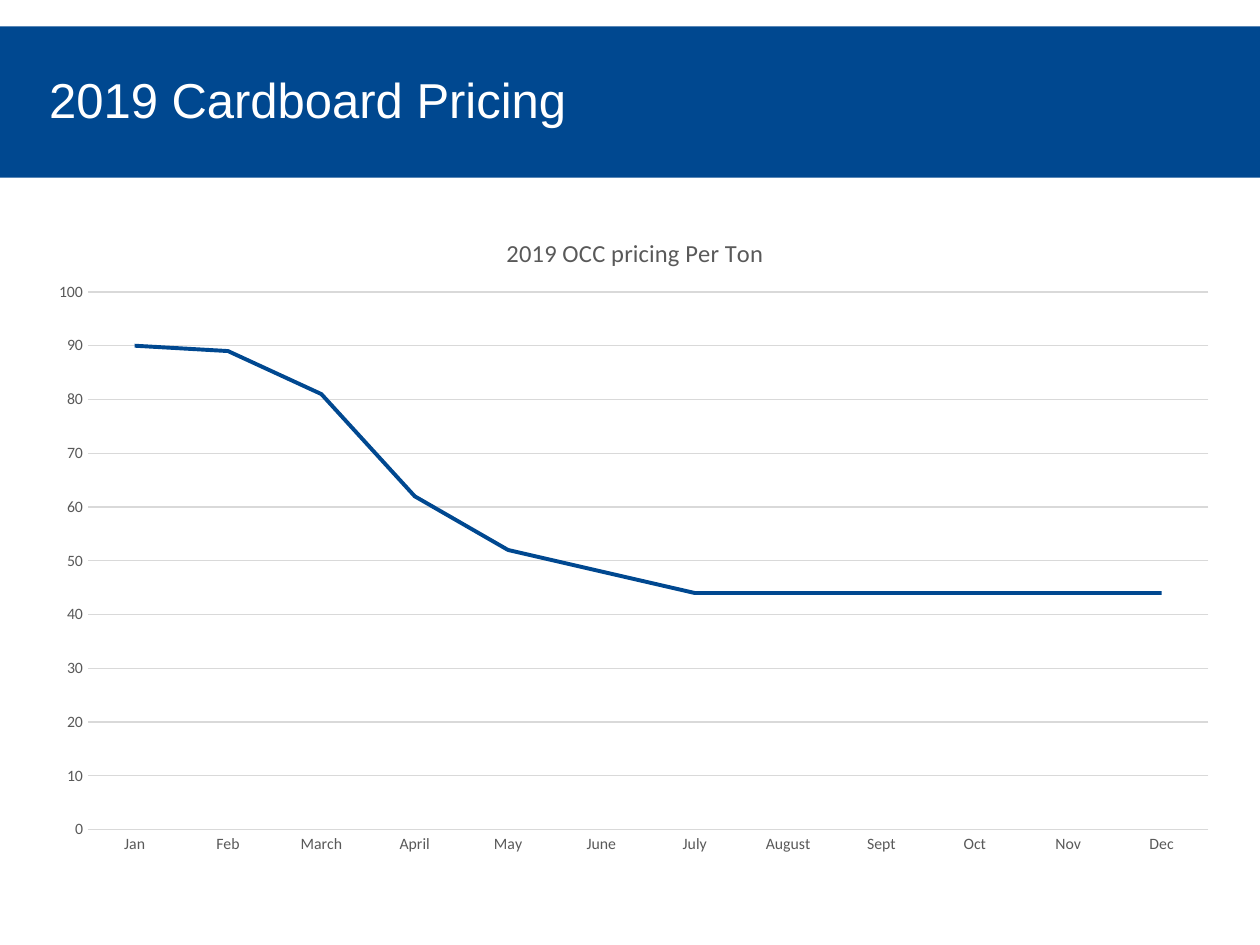
from pptx import Presentation
from pptx.chart.data import CategoryChartData
from pptx.dml.color import RGBColor
from pptx.enum.chart import XL_CHART_TYPE, XL_TICK_MARK
from pptx.enum.shapes import MSO_SHAPE
from pptx.enum.text import MSO_ANCHOR, MSO_AUTO_SIZE, PP_ALIGN
from pptx.oxml import parse_xml
from pptx.oxml.ns import nsdecls, qn
from pptx.util import Inches, Pt

LINE_CHART = XL_CHART_TYPE.LINE
NO_TICKS = XL_TICK_MARK.NONE
RECTANGLE = MSO_SHAPE.RECTANGLE
MIDDLE = MSO_ANCHOR.MIDDLE
NO_AUTO_SIZE = MSO_AUTO_SIZE.NONE
LEFT = PP_ALIGN.LEFT

THEME = {
    "blue": RGBColor(0x00, 0x48, 0x90),
    "white": RGBColor(0xFF, 0xFF, 0xFF),
    "grey": RGBColor(0x59, 0x59, 0x59),
    "rule": RGBColor(0xD9, 0xD9, 0xD9),
    "heading_font": "Arial",
    "chart_font": "Calibri",
    "heading_size": Pt(28),
    "chart_title_size": Pt(14),
    "chart_size": Pt(10),
    "axis_size": Pt(9),
    "rule_width": Pt(0.75),
    "series_width": Pt(2.25),
}

MONTHS = ["Jan", "Feb", "March", "April", "May", "June",
          "July", "August", "Sept", "Oct", "Nov", "Dec"]
PRICES = [90, 89, 81, 62, 52, 48] + [44] * 6


def style_font(font, name, size, color):
    font.name = name
    font.size = size
    font.bold = False
    font.color.rgb = color


def place_in_chart(parent, index, target="", **shares):
    """Fix a chart part's place, given as shares of the chart's size."""
    for old_layout in parent.findall(qn("c:layout")):
        parent.remove(old_layout)
    modes = "".join(f'<c:{axis}Mode val="edge"/>' for axis in "xy")
    values = "".join(f'<c:{key} val="{value}"/>' for key, value in shares.items())
    parent.insert(index, parse_xml(
        f'<c:layout {nsdecls("c")}><c:manualLayout>{target}{modes}{values}'
        "</c:manualLayout></c:layout>"))


presentation = Presentation()
presentation.slide_width = Inches(10)
presentation.slide_height = Inches(7.5)
slide = presentation.slides.add_slide(presentation.slide_layouts[5])

# Heading band, behind the title
band = slide.shapes.add_shape(
    RECTANGLE, 0, Inches(0.21), presentation.slide_width, Inches(1.2))
band.shadow.inherit = False
band.fill.solid()
band.fill.fore_color.rgb = THEME["blue"]
band.line.fill.background()
slide.shapes._spTree.insert(2, band._element)

title = slide.shapes.title
title.left, title.top = Inches(0.29), Inches(0.29)
title.width, title.height = Inches(7.76), Inches(1.05)
title.text_frame.word_wrap = True
title.text_frame.auto_size = NO_AUTO_SIZE
title.text_frame.vertical_anchor = MIDDLE
paragraph = title.text_frame.paragraphs[0]
paragraph.alignment = LEFT
paragraph.line_spacing = 0.9
run = paragraph.add_run()
run.text = "2019 Cardboard Pricing"
style_font(run.font, THEME["heading_font"], THEME["heading_size"], THEME["white"])

# Price chart
chart_data = CategoryChartData()
chart_data.categories = MONTHS
chart_data.add_series("Series 1", PRICES)
chart = slide.shapes.add_chart(
    LINE_CHART, Inches(0.28), Inches(1.63), Inches(9.5), Inches(5.25),
    chart_data).chart
chart.has_legend = False
chart.font.name = THEME["chart_font"]
chart.font.size = THEME["chart_size"]

chart.has_title = True
chart_title = chart.chart_title
chart_title.include_in_layout = False
run = chart_title.text_frame.paragraphs[0].add_run()
run.text = "2019 OCC pricing Per Ton"
style_font(run.font, THEME["chart_font"], THEME["chart_title_size"], THEME["grey"])
place_in_chart(chart_title._element, 1, x=0.39, y=0.04)
place_in_chart(chart._chartSpace.chart.plotArea, 0,
               '<c:layoutTarget val="inner"/>', x=0.044, y=0.131, w=0.936, h=0.813)

for axis in (chart.category_axis, chart.value_axis):
    axis.major_tick_mark = NO_TICKS
    axis.minor_tick_mark = NO_TICKS
    style_font(axis.tick_labels.font, THEME["chart_font"],
               THEME["axis_size"], THEME["grey"])

value_axis = chart.value_axis
value_axis.minimum_scale, value_axis.maximum_scale = 0, 100
value_axis.major_unit = 10
value_axis.format.line.fill.background()
for line in (chart.category_axis.format.line, value_axis.major_gridlines.format.line):
    line.color.rgb = THEME["rule"]
    line.width = THEME["rule_width"]

plot = chart.plots[0]
plot.vary_by_categories = False
series = plot.series[0]
series.smooth = False
series.format.line.color.rgb = THEME["blue"]
series.format.line.width = THEME["series_width"]

presentation.save("out.pptx")
